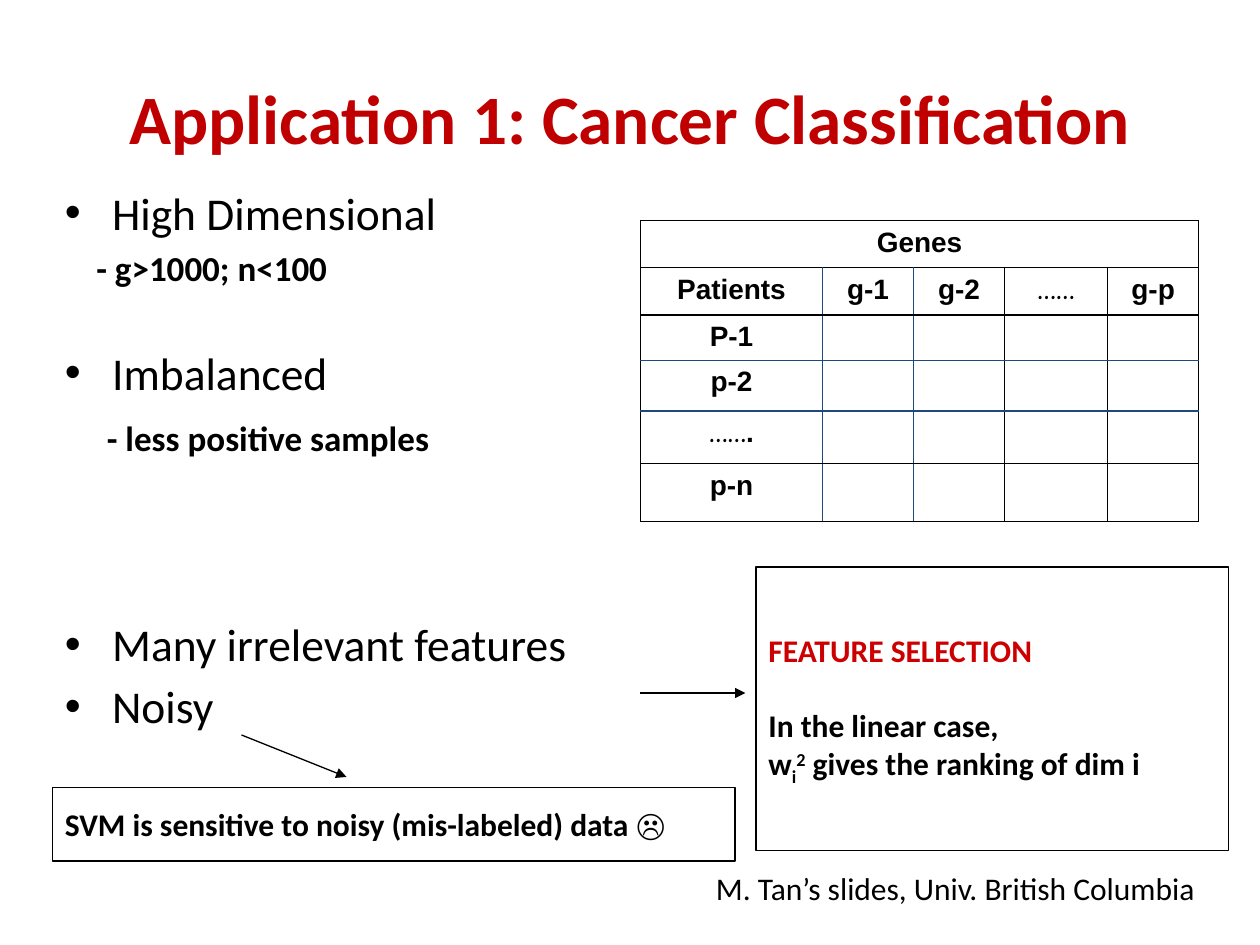
from dataclasses import dataclass

from lxml import etree
from pptx import Presentation
from pptx.dml.color import RGBColor
from pptx.enum.shapes import MSO_CONNECTOR, MSO_SHAPE
from pptx.enum.text import MSO_ANCHOR, PP_ALIGN
from pptx.oxml.ns import qn
from pptx.util import Pt

CENTER, LEFT = PP_ALIGN.CENTER, PP_ALIGN.LEFT
MIDDLE, TOP = MSO_ANCHOR.MIDDLE, MSO_ANCHOR.TOP
RECT, STRAIGHT = MSO_SHAPE.RECTANGLE, MSO_CONNECTOR.STRAIGHT


@dataclass(frozen=True)
class Theme:
    font: str = "Calibri"
    table_font: str = "Arial"
    dots_font: str = "Comic Neue"
    black: str = "000000"
    title_red: str = "C00000"
    red: str = "CC0000"
    blue: str = "1F497D"
    title: float = 39.6
    bullet: float = 26
    sub: float = 20
    note: float = 18
    cell: float = 16
    line: float = 0.75
    border: float = 1


THEME = Theme()


def add_run(p, text, *, size=THEME.note, font=THEME.font, color=THEME.black,
            bold=False, baseline=0):
    r = p.add_run()
    r.text = text
    r.font.size, r.font.name, r.font.bold = Pt(size), font, bold
    r.font.color.rgb = RGBColor.from_string(color)
    if baseline:
        r._r.get_or_add_rPr().set("baseline", str(baseline * 1000))
    return r


class SlideBuilder:
    def __init__(self, prs, theme):
        self.t = theme
        self.s = prs.slides.add_slide(prs.slide_layouts[5])

    def title(self, text, x, y, w, h):
        sp = self.s.shapes.title
        sp.left, sp.top, sp.width, sp.height = map(Pt, (x, y, w, h))
        tf = sp.text_frame
        tf.vertical_anchor = MIDDLE
        p = tf.paragraphs[0]
        p.alignment = CENTER
        add_run(p, text, size=self.t.title, color=self.t.title_red, bold=True)

    def fill_text(self, tf, paras, anchor=TOP):
        """Each paragraph is (space before, [(text, format), ...])."""
        tf.word_wrap = True
        tf.vertical_anchor = anchor
        for i, (before, runs) in enumerate(paras):
            p = tf.add_paragraph() if i else tf.paragraphs[0]
            p.alignment = LEFT
            p.space_before = Pt(before)
            for text, fmt in runs:
                add_run(p, text, **fmt)

    def text(self, x, y, w, h, paras):
        sp = self.s.shapes.add_textbox(*map(Pt, (x, y, w, h)))
        self.fill_text(sp.text_frame, paras)
        return sp.text_frame

    def bullets(self, x, y, w, h, items):
        """Each item is (space before, text, indent); no indent means a bullet."""
        main = {"size": self.t.bullet}
        sub = {"size": self.t.sub, "bold": True}
        tf = self.text(x, y, w, h, [(before, [(text, sub if indent else main)])
                                    for before, text, indent in items])
        for p, (_, _, indent) in zip(tf.paragraphs, items):
            pPr = p._p.get_or_add_pPr()
            pPr.set("marL", str(Pt(indent or 27)))
            if not indent:
                pPr.set("indent", str(-Pt(27)))
                etree.SubElement(pPr, qn("a:buFont"), typeface="Arial")
                etree.SubElement(pPr, qn("a:buChar"), char="•")

    def box(self, x, y, w, h, paras):
        sp = self.s.shapes.add_shape(RECT, *map(Pt, (x, y, w, h)))
        sp.shadow.inherit = False
        sp.fill.background()
        sp.line.color.rgb = RGBColor.from_string(self.t.black)
        sp.line.width = Pt(self.t.line)
        self.fill_text(sp.text_frame, paras, MIDDLE)

    def arrow(self, x1, y1, x2, y2):
        c = self.s.shapes.add_connector(STRAIGHT, *map(Pt, (x1, y1, x2, y2)))
        c.line.color.rgb = RGBColor.from_string(self.t.black)
        c.line.width = Pt(self.t.line)
        etree.SubElement(c.line._get_or_add_ln(), qn("a:tailEnd"), type="triangle")
        etree.SubElement(c._element.spPr, qn("a:effectLst"))

    def borders(self, cell, colors):
        tcPr = cell._tc.get_or_add_tcPr()
        for side, color in zip("LRTB", colors):
            ln = etree.SubElement(tcPr, qn(f"a:ln{side}"), w=str(Pt(self.t.border)))
            fill = etree.SubElement(ln, qn("a:solidFill"))
            etree.SubElement(fill, qn("a:srgbClr"), val=color)

    def table(self, x, y, cols, rows, texts, blue_cols, blue_rows):
        """blue_cols and blue_rows number the grid lines drawn in blue."""
        tbl = self.s.shapes.add_table(len(rows), len(cols), Pt(x), Pt(y),
                                      Pt(sum(cols)), Pt(sum(rows))).table
        tbl.first_row = tbl.horz_banding = False
        for col, w in zip(tbl.columns, cols):
            col.width = Pt(w)
        for row, h in zip(tbl.rows, rows):
            row.height = Pt(h)
        tbl.cell(0, 0).merge(tbl.cell(0, len(cols) - 1))
        for i in range(len(rows)):
            for j in range(len(cols)):
                cell = tbl.cell(i, j)
                cell.margin_bottom = 0
                blue = [i > 0 and j in blue_cols, i > 0 and j + 1 in blue_cols,
                        i in blue_rows, i + 1 in blue_rows]
                self.borders(cell, [self.t.blue if b else self.t.black for b in blue])
                cell.fill.background()
                p = cell.text_frame.paragraphs[0]
                p.alignment = CENTER
                for part in texts.get((i, j), ()):
                    font = self.t.dots_font if "…" in part else self.t.table_font
                    add_run(p, part, size=self.t.cell, font=font, bold=True)


def main():
    prs = Presentation()
    prs.slide_width, prs.slide_height = Pt(720), Pt(540)
    b = SlideBuilder(prs, THEME)
    bold = {"bold": True}

    # Title and main points
    b.title("Application 1: Cancer Classification", 36, 21.6, 648, 90)
    b.bullets(30, 102, 324, 360, [
        (4.3, "High Dimensional", 0),
        (4.3, "- g>1000; n<100", 18),
        (32, "Imbalanced", 0),
        (10, "- less positive samples", 24),
        (90, "Many irrelevant features", 0),
        (4.3, "Noisy", 0),
    ])

    # Patients by genes
    header = ["Patients", "g-1", "g-2", "……", "g-p"]
    patients = [["P-1"], ["p-2"], ["……", "."], ["p-n"]]
    texts = {(0, 0): ["Genes"]}
    texts.update({(1, j): [text] for j, text in enumerate(header)})
    texts.update({(i, 0): parts for i, parts in enumerate(patients, 2)})
    b.table(366, 126, [104, 52, 52, 59, 52], [27, 27, 26, 29, 30, 33], texts,
            blue_cols=(1, 2), blue_rows=(3, 4))

    # Remedy for irrelevant features
    b.arrow(366, 396, 426, 396)
    b.box(432, 324, 270, 162, [
        (0, [("FEATURE SELECTION", {"bold": True, "color": THEME.red})]),
        (21.6, [("In the linear case,", bold)]),
        (0, [("w", bold),
             ("i", {"bold": True, "baseline": -25}),
             ("2", {"bold": True, "baseline": 30}),
             (" gives the ranking of dim i", bold)]),
    ])

    # Effect of noise
    b.arrow(138, 420, 198, 444)
    b.box(30, 450, 390, 42,
          [(0, [("SVM is sensitive to noisy (mis-labeled) data ☹", bold)])])

    # Credit
    b.text(402, 493, 292, 29, [(0, [("M. Tan’s slides, Univ. British Columbia", {})])])

    prs.save("out.pptx")


if __name__ == "__main__":
    main()
